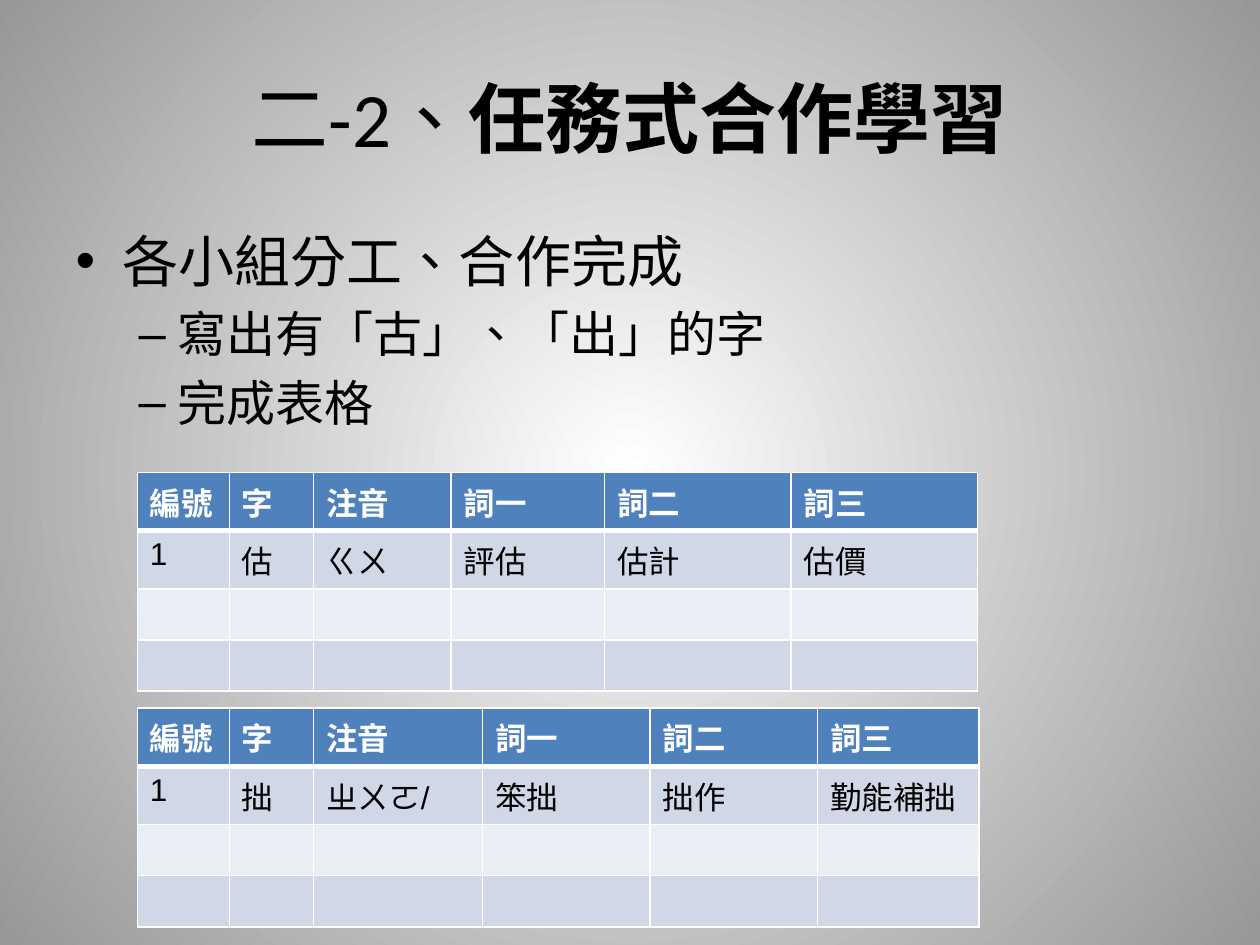
from lxml import etree
from pptx import Presentation
from pptx import util as u
from pptx.dml.color import RGBColor
from pptx.enum import text
from pptx.oxml import ns

COLORS = {
    "text": "000000", "white": "FFFFFF", "bg_edge": "979797",
    "header": "4F81BD", "band_dark": "D0D8E8", "band_light": "E9EDF4",
}
TABLE_LEFT, TABLE_WIDTH, ROW_HEIGHT = 1.09, 6.67, 0.4
HEADINGS = ["編號", "字", "注音", "詞一", "詞二", "詞三"]
TABLES = [
    (3.75, [0.73, 0.67, 1.09, 1.22, 1.48, 1.48],
     ["1", "估", "ㄍㄨ", "評估", "估計", "估價"]),
    (5.62, [0.73, 0.67, 1.34, 1.33, 1.33, 1.28],
     ["1", "拙", "ㄓㄨㄛ/", "笨拙", "拙作", "勤能補拙"]),
]


def rgb(name):
    return RGBColor.from_string(COLORS[name])


def sub(parent, tag, **attrs):
    return etree.SubElement(parent, ns.qn(tag), attrs)


def place(sp, left, top, width, height):
    sp.left, sp.top = u.Inches(left), u.Inches(top)
    sp.width, sp.height = u.Inches(width), u.Inches(height)


def add_run(p, words, size, font="Calibri", color="text", bold=None, asian=None):
    r = p.add_run()
    r.text = words
    r.font.size = u.Pt(size)
    r.font.name = font
    r.font.bold = bold
    r.font.color.rgb = rgb(color)
    rPr = r._r.get_or_add_rPr()
    rPr.set("lang", "zh-TW")
    if asian:
        sub(rPr, "a:ea", typeface=asian)


def set_background(s):
    fill = s.background.fill
    fill.gradient()
    for stop, name in zip(fill.gradient_stops, ("white", "bg_edge")):
        stop.color.rgb = rgb(name)
    # Turn the linear gradient into a circular one
    grad = next(s._element.iter(ns.qn("a:gradFill")))
    grad.remove(grad.find(ns.qn("a:lin")))
    circle = sub(grad, "a:path", path="circle")
    sub(circle, "a:fillToRect", l="50000", t="50000", r="50000", b="50000")


def add_title(s):
    sp = s.shapes.title
    place(sp, 0.5, 0.3, 9, 1.25)
    tf = sp.text_frame
    tf.vertical_anchor = text.MSO_ANCHOR.MIDDLE
    p = tf.paragraphs[0]
    p.alignment = text.PP_ALIGN.CENTER
    add_run(p, "二-2", 44)
    add_run(p, "、", 44, asian="Noto Sans CJK TC")
    add_run(p, "任務式合作學習", 44, bold=True, asian="Noto Sans CJK SC")


def add_body(s):
    sp = s.placeholders[1]
    place(sp, 0.5, 1.75, 9, 2)
    tf = sp.text_frame
    items = [(0, "各小組分工、合作完成"), (1, "寫出有「古」、「出」的字"), (1, "完成表格")]
    for i, (level, words) in enumerate(items):
        p = tf.add_paragraph() if i else tf.paragraphs[0]
        p.level = level
        add_run(p, words, (32, 28)[level])


def set_borders(cell, bottom):
    tcPr = cell._tc.get_or_add_tcPr()
    widths = {"a:lnL": 1, "a:lnR": 1, "a:lnT": 1, "a:lnB": bottom}
    # Border lines come before the fill
    for i, (tag, width) in enumerate(widths.items()):
        ln = etree.Element(ns.qn(tag), w=str(u.Pt(width)))
        sub(sub(ln, "a:solidFill"), "a:srgbClr", val=COLORS["white"])
        tcPr.insert(i, ln)


def add_word_table(s, top, widths, example):
    rows = [HEADINGS, example, [""] * 6, [""] * 6]
    fills = ["header", "band_dark", "band_light", "band_dark"]
    table = s.shapes.add_table(
        len(rows), len(widths), u.Inches(TABLE_LEFT), u.Inches(top),
        u.Inches(TABLE_WIDTH), u.Inches(ROW_HEIGHT * len(rows))).table
    for column, width in zip(table.columns, widths):
        column.width = u.Inches(width)
    for i, (row, fill) in enumerate(zip(rows, fills)):
        header = i == 0
        for j, words in enumerate(row):
            cell = table.cell(i, j)
            cell.fill.solid()
            cell.fill.fore_color.rgb = rgb(fill)
            set_borders(cell, 3 if header else 1)
            if words:
                add_run(cell.text_frame.paragraphs[0], words, 18, "Arial",
                        "white" if header else "text", header)


def main():
    prs = Presentation()
    prs.slide_width, prs.slide_height = u.Inches(10), u.Inches(7.5)
    s = prs.slides.add_slide(prs.slide_layouts[1])
    set_background(s)
    add_title(s)
    add_body(s)
    for top, widths, example in TABLES:
        add_word_table(s, top, widths, example)
    prs.save("out.pptx")


if __name__ == "__main__":
    main()
